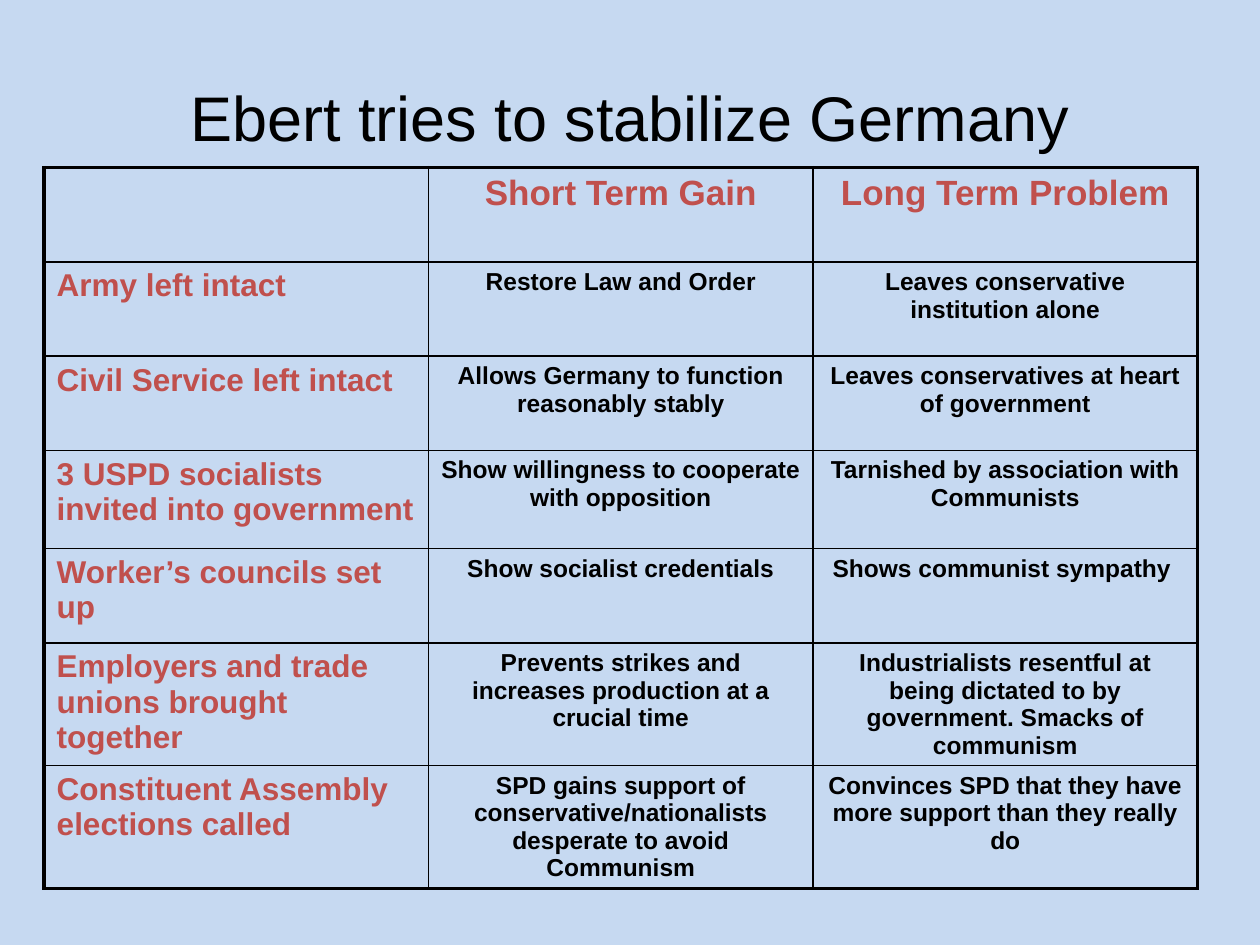
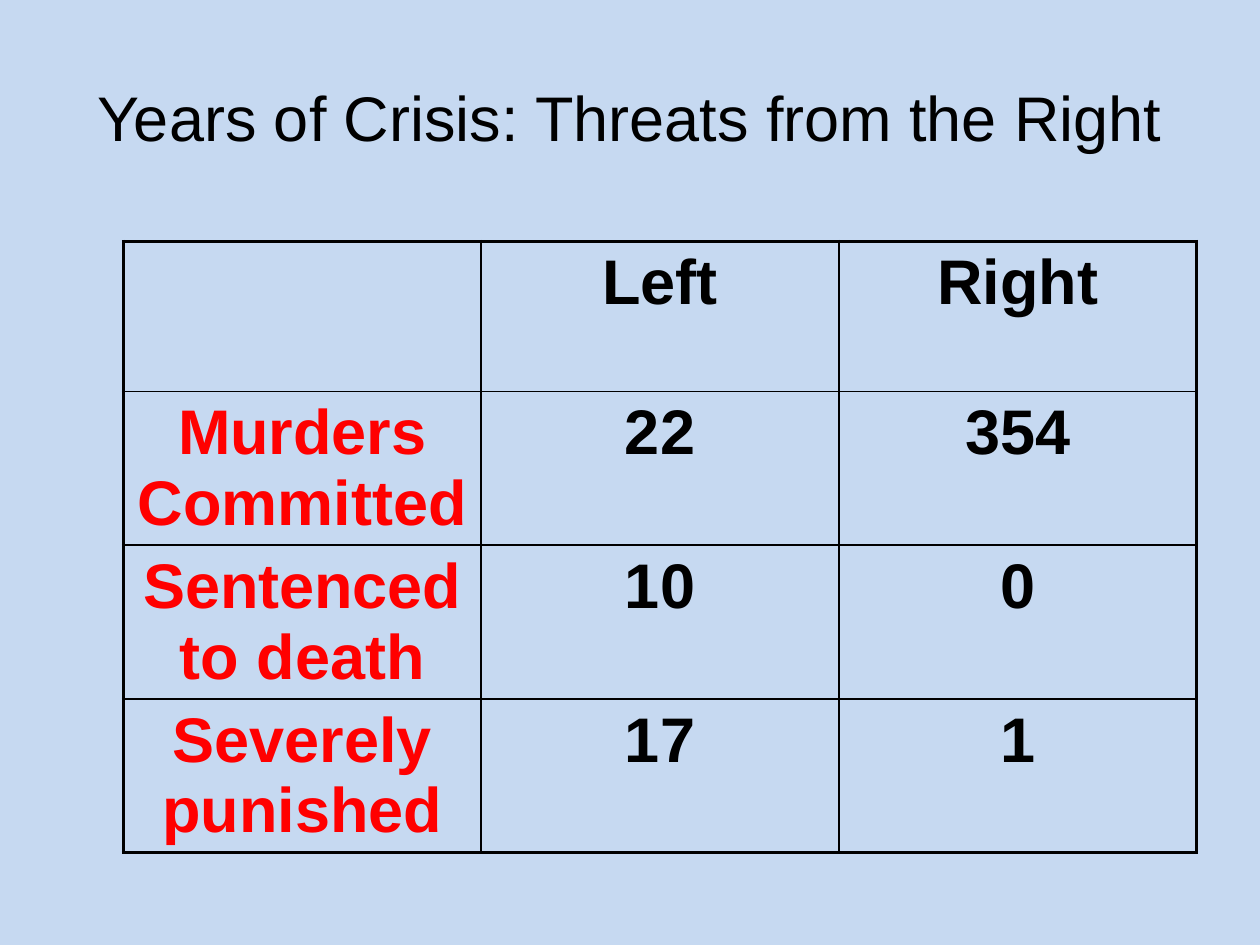
from lxml import etree
from pptx import Presentation
from pptx import util as u
from pptx.dml.color import RGBColor
from pptx.enum import text
from pptx.oxml.ns import qn

# Shared look
SKY = RGBColor(0xC6, 0xD9, 0xF1)
BLACK = RGBColor(0, 0, 0)
BRICK = RGBColor(0xC0, 0x50, 0x4D)
RED = RGBColor(0xFF, 0, 0)
FONT = "Arial"
THIN, THICK = u.Pt(1), u.Pt(2.25)
LEFT, MID = text.PP_ALIGN.LEFT, text.PP_ALIGN.CENTER

# Content: styles are (size, colour, alignment), lengths are in cm
SLIDES = [
    dict(
        title="Ebert tries to stabilize Germany",
        at=(0.89, 3.38), width=7.75,
        heights=[1.9, 1.9, 1.9, 1.98, 1.9, 2.26, 2.16],
        head=(20, BRICK, MID), side=(18, BRICK, LEFT), body=(14, BLACK, MID),
        rows=[
            ("", "Short Term Gain", "Long Term Problem"),
            ("Army left intact", "Restore Law and Order",
             "Leaves conservative institution alone"),
            ("Civil Service left intact",
             "Allows Germany to function reasonably stably",
             "Leaves conservatives at heart of government"),
            ("3 USPD socialists invited into government",
             "Show willingness to cooperate with opposition",
             "Tarnished by association with Communists"),
            ("Worker’s councils set up", "Show socialist credentials",
             "Shows communist sympathy "),
            ("Employers and trade unions brought together",
             "Prevents strikes and increases production at a crucial time",
             "Industrialists resentful at being dictated to by government. "
             "Smacks of communism"),
            ("Constituent Assembly elections called",
             "SPD gains support of conservative/nationalists desperate "
             "to avoid Communism",
             "Convinces SPD that they have more support than they really do"),
        ],
    ),
    dict(
        title="Years of Crisis: Threats from the Right",
        at=(2.49, 4.87), width=7.21,
        heights=[3.02] * 4,
        head=(36, BLACK, MID), side=(36, RED, MID), body=(36, BLACK, MID),
        rows=[
            ("", "Left", "Right"),
            ("Murders Committed", "22", "354"),
            ("Sentenced to death", "10", "0"),
            ("Severely punished", "17", "1"),
        ],
    ),
]


def style(frame, size, color, align, bold):
    for para in frame.paragraphs:
        para.alignment = align
        for run in para.runs:
            font = run.font
            font.name, font.size, font.bold = FONT, u.Pt(size), bold
            font.color.rgb = color


def add_title(slide, words):
    box = slide.shapes.title
    box.left, box.top = u.Cm(1.27), u.Cm(0.76)
    box.width, box.height = u.Cm(22.86), u.Cm(3.18)
    frame = box.text_frame
    frame.text = words
    frame.auto_size = text.MSO_AUTO_SIZE.NONE
    frame.vertical_anchor = text.MSO_ANCHOR.MIDDLE
    style(frame, 36, BLACK, MID, False)


def add_edge(cell, tag, width):
    line = etree.SubElement(cell._tc.get_or_add_tcPr(), qn(tag), w=str(width))
    fill = etree.SubElement(line, qn("a:solidFill"))
    etree.SubElement(fill, qn("a:srgbClr"), val=str(BLACK))


def add_grid(slide, data):
    rows, heights = data["rows"], data["heights"]
    count, span = len(rows), len(rows[0])
    left, top = data["at"]
    table = slide.shapes.add_table(
        count, span, u.Cm(left), u.Cm(top),
        u.Cm(data["width"] * span), u.Cm(sum(heights))).table
    table.first_row = table.horz_banding = False
    for col in table.columns:
        col.width = u.Cm(data["width"])
    for r, row in enumerate(rows):
        table.rows[r].height = u.Cm(heights[r])
        for c, words in enumerate(row):
            cell = table.cell(r, c)
            cell.text_frame.text = words
            part = "head" if r == 0 else "side" if c == 0 else "body"
            style(cell.text_frame, *data[part], True)
            # Thick outer frame, thin inner lines
            edges = {"a:lnL": c == 0, "a:lnR": c == span - 1,
                     "a:lnT": r == 0, "a:lnB": r == count - 1}
            for tag, outer in edges.items():
                add_edge(cell, tag, THICK if outer else THIN)
            cell.fill.background()


def main():
    prs = Presentation()
    prs.slide_width, prs.slide_height = u.Cm(25.4), u.Cm(19.05)
    back = prs.slide_master.background.fill
    back.solid()
    back.fore_color.rgb = SKY
    for data in SLIDES:
        slide = prs.slides.add_slide(prs.slide_layouts.get_by_name("Title Only"))
        add_title(slide, data["title"])
        add_grid(slide, data)
    prs.save("out.pptx")


if __name__ == "__main__":
    main()
